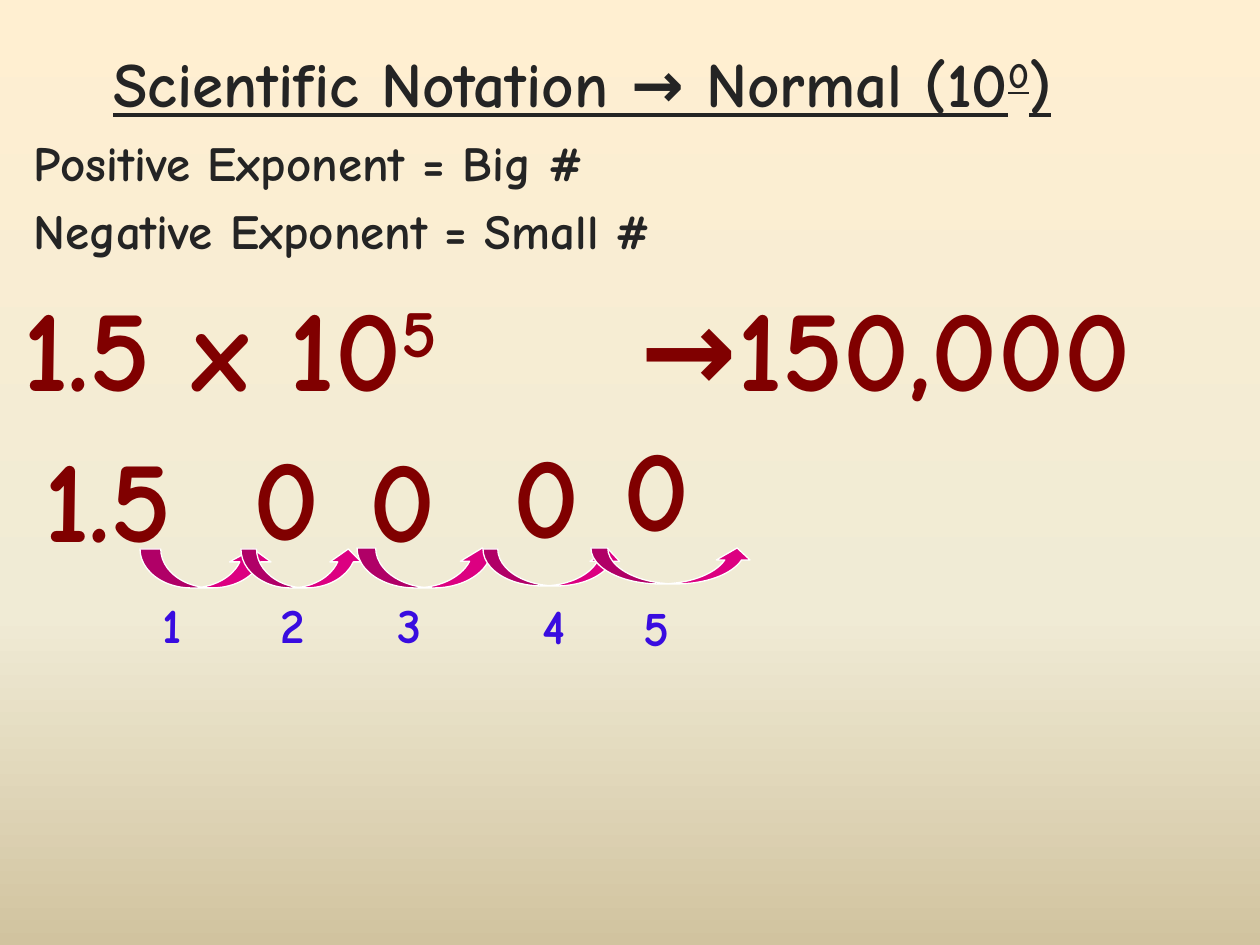
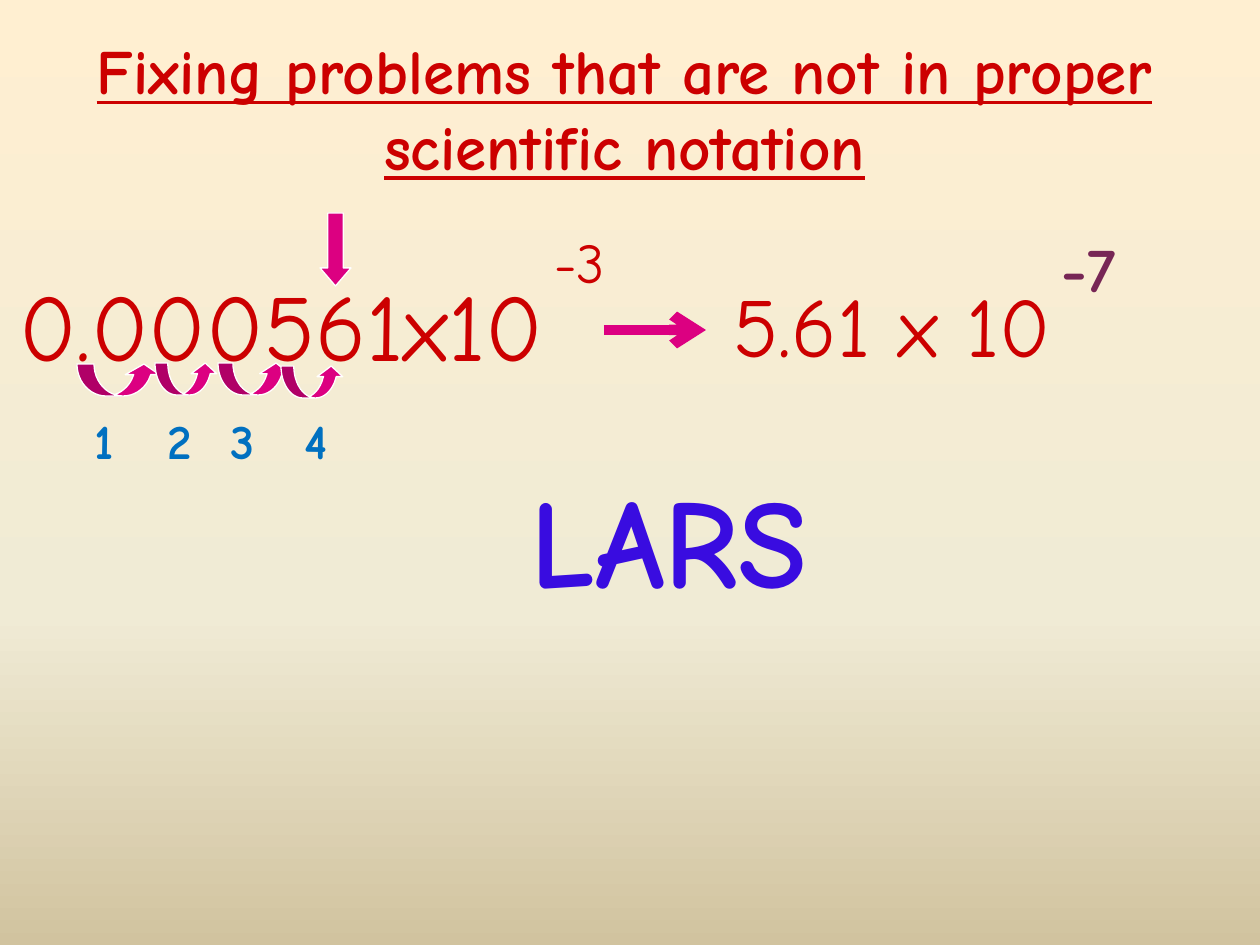
from lxml import etree
from pptx import Presentation
from pptx.dml.color import RGBColor
from pptx.enum.shapes import MSO_CONNECTOR, MSO_SHAPE
from pptx.enum.text import MSO_ANCHOR, MSO_AUTO_SIZE, PP_ALIGN
from pptx.oxml.ns import qn
from pptx.util import Pt

PX = 914400 / 126  # EMU per px
WIDTH, HEIGHT = 1260, 945
FONT = "Comic Neue"
TITLE_ONLY = 5
HOP, DOWN = MSO_SHAPE.CURVED_UP_ARROW, MSO_SHAPE.DOWN_ARROW
STRAIGHT = MSO_CONNECTOR.STRAIGHT
BOTTOM, CENTER, NO_FIT = MSO_ANCHOR.BOTTOM, PP_ALIGN.CENTER, MSO_AUTO_SIZE.NONE

COLORS = {
    "ink": "242424", "maroon": "800000", "red": "CC0000", "plum": "772655",
    "violet": "390CE0", "blue": "0070C0", "pink": "DC0081", "white": "FFFFFF",
}
BACKGROUND = [(0, "FFEFD1"), (65, "F0EBD5"), (100, "D1C39F")]


def px(*lengths):
    return [round(n * PX) for n in lengths]


def rgb(name):
    return RGBColor.from_string(COLORS[name])


def set_background(master):
    """Vertical three-stop gradient shared by all slides."""
    fill = master.background.fill
    fill.gradient()
    fill.gradient_angle = 270
    stops = master.element.find(".//" + qn("a:gsLst"))
    for stop in list(stops):
        stops.remove(stop)
    for percent, color in BACKGROUND:
        stop = etree.SubElement(stops, qn("a:gs"), pos=str(percent * 1000))
        etree.SubElement(stop, qn("a:srgbClr"), val=color)


def write(p, parts, size, color, bold=True, underline=None):
    """Fill a paragraph; every second part is a superscript."""
    for i, text in enumerate(parts):
        r = p.add_run()
        r.text = text
        if i % 2:
            r._r.get_or_add_rPr().set("baseline", "30000")
    font = p.font
    font.name, font.size, font.bold, font.underline = FONT, Pt(size), bold, underline
    font.color.rgb = rgb(color)


def add_text(slide, box, lines, size, color, bold=True):
    tf = slide.shapes.add_textbox(*px(*box)).text_frame
    tf.word_wrap = True
    for i, parts in enumerate(lines):
        p = tf.add_paragraph() if i else tf.paragraphs[0]
        p.space_before = Pt(size * 0.2 if i else 0)
        write(p, parts, size, color, bold)


def add_titled_slide(prs, box, parts, color):
    slide = prs.slides.add_slide(prs.slide_layouts[TITLE_ONLY])
    title = slide.shapes.title
    title.left, title.top, title.width, title.height = px(*box)
    tf = title.text_frame
    tf.auto_size, tf.vertical_anchor, tf.word_wrap = NO_FIT, BOTTOM, True
    p = tf.paragraphs[0]
    p.alignment = CENTER
    write(p, parts, 36, color, underline=True)
    return slide


def add_arrow(slide, kind, box, adjustments):
    sp = slide.shapes.add_shape(kind, *px(*box))
    sp.shadow.inherit = False
    for i, value in enumerate(adjustments):
        sp.adjustments[i] = value
    sp.fill.solid()
    sp.fill.fore_color.rgb = rgb("pink")
    sp.line.color.rgb = rgb("white")
    sp.line.width = Pt(0.75)


def add_hops(slide, left, top, hops):
    """Curved arrows that move the decimal point one place each."""
    for x, y, w, h, thickness in hops:
        add_arrow(slide, HOP, (left + x, top + y, w, h),
                  (thickness, 2 * thickness, 0.333))


def add_counts(slide, left, top, width, places, color):
    """Number the hops from 1."""
    for number, (x, y) in enumerate(places, 1):
        add_text(slide, (left + x, top + y, width, 72), [[str(number)]], 28, color)


def add_line_arrow(slide, left, top, width):
    line = slide.shapes.add_connector(STRAIGHT, *px(left, top, left + width, top))
    line.line.color.rgb = rgb("pink")
    line.line.width = Pt(6)
    props = line.element.spPr
    etree.SubElement(props.find(qn("a:ln")), qn("a:tailEnd"), type="arrow")
    etree.SubElement(props, qn("a:effectLst"))


def build_normal_form(prs):
    slide = add_titled_slide(prs, (0, 0, 1165, 126),
                             ["Scientific Notation → Normal (10", "0", ")"], "ink")
    add_text(slide, (21, 126, 1081, 168),
             [["Positive Exponent = Big #"], ["Negative Exponent = Small #"]], 28, "ink")

    # Conversion
    add_text(slide, (11, 270, 640, 151), [["1.5 x 10", "5"]], 66, "maroon")
    add_text(slide, (628, 270, 632, 152), [["→150,000"]], 66, "maroon")

    # Decimal point moved five places
    add_text(slide, (32, 421, 200, 151), [["1.5"]], 66, "maroon")
    add_hops(slide, 140, 548, [
        (0, 1, 134, 39, 0.533), (101, 1, 123, 39, 0.4), (217, 0, 144, 40, 0.467),
        (343, 1, 140, 37, 0.4), (451, 0, 163, 36, 0.467)])
    add_counts(slide, 150, 588, 123,
               [(0, 0), (118, 0), (235, 0), (380, 1), (481, 3)], "violet")
    for left, top in [(241, 419), (357, 421), (501, 417), (611, 410)]:
        add_text(slide, (left, top, 123, 151), [["0"]], 66, "maroon")


def build_fixing(prs):
    slide = add_titled_slide(
        prs, (80, 31, 1089, 158),
        ["Fixing problems that are not in proper scientific notation"], "red")

    # Improper form and its corrected form
    add_text(slide, (7, 261, 759, 128), [["0.000561x10"]], 54, "red", False)
    add_text(slide, (542, 221, 102, 81), [["-3"]], 32, "red", False)
    add_line_arrow(slide, 604, 330, 102)
    add_text(slide, (721, 267, 539, 115), [["5.61 x 10"]], 48, "red", False)
    add_text(slide, (1049, 223, 211, 89), [["-7"]], 36, "plum")

    # Decimal point moved four places
    add_arrow(slide, DOWN, (320, 213, 31, 73), (0.5, 0.583))
    add_hops(slide, 77, 363, [
        (0, 1, 84, 32, 0.533), (78, 0, 63, 32, 0.4),
        (141, 0, 73, 32, 0.467), (204, 3, 63, 32, 0.4)])
    add_counts(slide, 82, 404, 55, [(0, 0), (73, 0), (136, 0), (210, 0)], "blue")

    add_text(slide, (518, 456, 374, 165), [["LARS"]], 72, "violet")


def main():
    prs = Presentation()
    prs.slide_width, prs.slide_height = px(WIDTH, HEIGHT)
    set_background(prs.slide_master)
    build_normal_form(prs)
    build_fixing(prs)
    prs.save("out.pptx")


if __name__ == "__main__":
    main()
